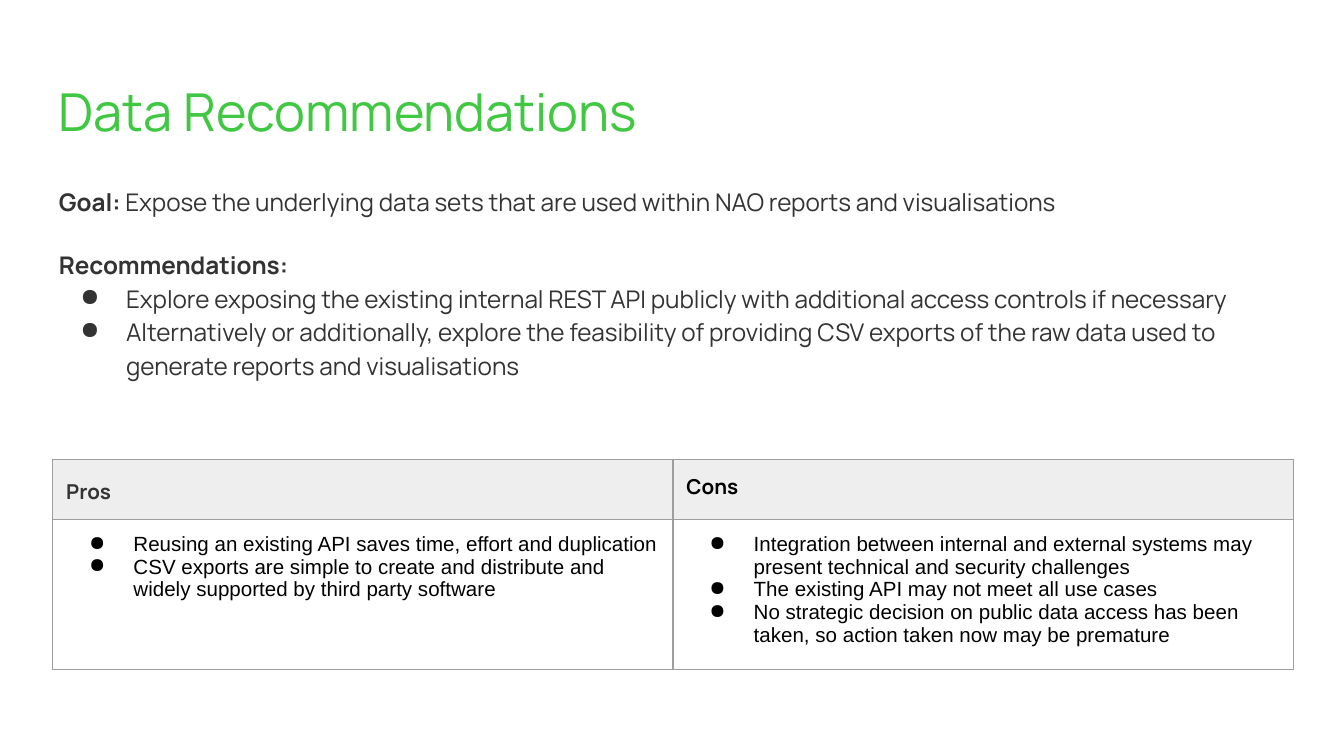
"""Build the Data Recommendations slide with its pros and cons table."""
from lxml import etree
from pptx import Presentation
from pptx.dml.color import RGBColor
from pptx.enum.text import MSO_ANCHOR
from pptx.oxml import parse_xml
from pptx.util import Pt

TOP = MSO_ANCHOR.TOP
NS = "http://schemas.openxmlformats.org/drawingml/2006/main"
GREEN, DARK, BLACK, GREY, LIGHT = "40C842", "333333", "000000", "9E9E9E", "EEEEEE"
INSET = {f"margin_{side}": Pt(7.2) for side in ("left", "top", "right", "bottom")}

TITLE = {"name": "Manrope", "size": Pt(28), "color": GREEN}
BODY = {"name": "Manrope", "size": Pt(13), "color": DARK}
BODY_BOLD = {**BODY, "bold": True}
PROS = {**BODY_BOLD, "size": Pt(11)}
CONS = {**PROS, "color": BLACK}
CELL = {"name": "Arial", "size": Pt(11), "color": BLACK}
LOOSE = {"line_spacing": 1.15}


def rgb(value):
    return RGBColor.from_string(value)


def fill_text(tf, paragraphs):
    for i, (runs, layout, indent) in enumerate(paragraphs):
        p = tf.paragraphs[0] if i == 0 else tf.add_paragraph()
        if indent:
            pPr = p._p.get_or_add_pPr()
            pPr.set("marL", str(Pt(36)))
            pPr.set("indent", str(Pt(indent)))
            clr = etree.SubElement(pPr, f"{{{NS}}}buClr")
            etree.SubElement(clr, f"{{{NS}}}srgbClr", val=runs[0][1]["color"])
            etree.SubElement(pPr, f"{{{NS}}}buChar", char="●")
        for key, value in layout.items():
            setattr(p, key, value)
        for text, style in runs:
            r = p.add_run()
            r.text = text
            for key, value in style.items():
                if key == "color":
                    r.font.color.rgb = rgb(value)
                else:
                    setattr(r.font, key, value)


prs = Presentation()
prs.slide_width, prs.slide_height = Pt(720), Pt(405)
s = prs.slides.add_slide(prs.slide_layouts[6])

body = [
    ([("Goal: ", BODY_BOLD),
      ("Expose the underlying data sets that are used within NAO reports and visualisations", BODY)],
     LOOSE, 0),
    ([("Recommendations:", BODY_BOLD)], {**LOOSE, "space_before": Pt(16)}, 0),
]
for text in (
    "Explore exposing the existing internal REST API publicly with additional access controls if necessary",
    "Alternatively or additionally, explore the feasibility of providing CSV exports of the raw data "
    "used to generate reports and visualisations",
):
    body.append(([(text, BODY)], LOOSE, -24.5))

for top, height, paragraphs in (
    (35, 45, [([("Data Recommendations", TITLE)], {}, 0)]),
    (90.7, 269, body),
):
    sp = s.shapes.add_textbox(Pt(24.5), Pt(top), Pt(671), Pt(height))
    tf = sp.text_frame
    for key, value in {**INSET, "word_wrap": True, "vertical_anchor": TOP}.items():
        setattr(tf, key, value)
    fill_text(tf, paragraphs)

columns = [
    ("Pros", PROS, {**LOOSE, "space_after": Pt(16)}, [
        "Reusing an existing API saves time, effort and duplication",
        "CSV exports are simple to create and distribute and widely supported by third party software",
    ]),
    ("Cons", CONS, {}, [
        "Integration between internal and external systems may present technical and security challenges",
        "The existing API may not meet all use cases",
        "No strategic decision on public data access has been taken, so action taken now may be premature",
    ]),
]
table = s.shapes.add_table(2, 2, Pt(28.3), Pt(246.2), Pt(664.6), Pt(107.6)).table
table.first_row = table.horz_banding = False
for row, height in zip(table.rows, (32, 75.6)):
    row.height = Pt(height)
for col, (heading, style, layout, points) in enumerate(columns):
    table.columns[col].width = Pt(332.3)
    contents = (
        [([(heading, style)], layout, 0)],
        [([(text, CELL)], {}, -23.75) for text in points],
    )
    for row, paragraphs in enumerate(contents):
        cell = table.cell(row, col)
        for key, value in {**INSET, "vertical_anchor": TOP}.items():
            setattr(cell, key, value)
        tcPr = cell._tc.get_or_add_tcPr()
        for side in "LRTB":
            tcPr.append(parse_xml(
                f'<a:ln{side} xmlns:a="{NS}" w="{Pt(0.75)}"><a:solidFill>'
                f'<a:srgbClr val="{GREY}"/></a:solidFill></a:ln{side}>'))
        if row == 0:
            cell.fill.solid()
            cell.fill.fore_color.rgb = rgb(LIGHT)
        else:
            cell.fill.background()
        fill_text(cell.text_frame, paragraphs)

prs.save("out.pptx")
